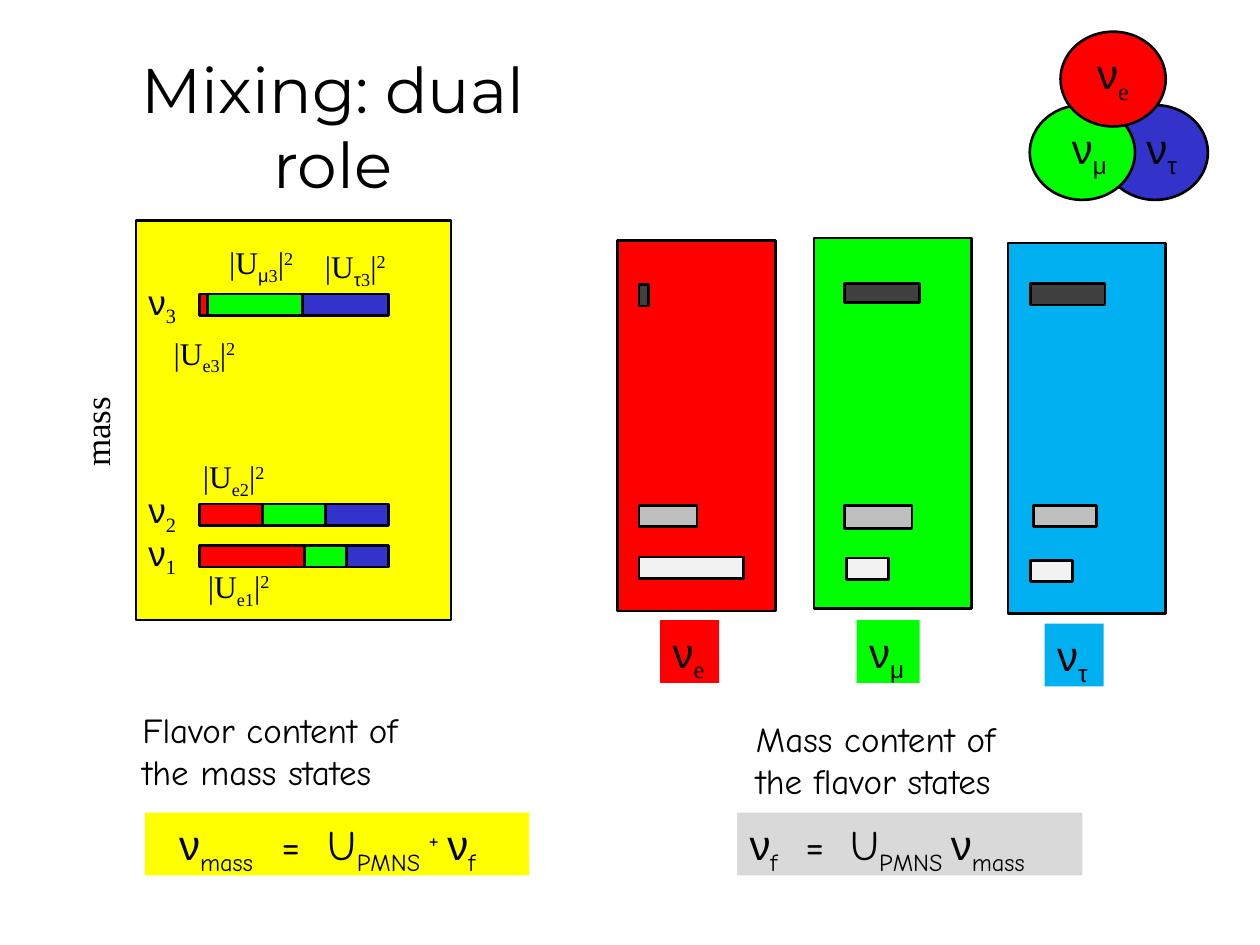
"""Build the neutrino mixing slide: flavor content of mass states and mass content of flavor states."""
import pptx
import pptx.dml.color
import pptx.enum.shapes
import pptx.enum.text
import pptx.oxml
import pptx.oxml.ns
import pptx.util

Cm = pptx.util.Cm
SHAPES = pptx.enum.shapes.MSO_SHAPE
COLORS = {
    "black": "000000", "red": "FF0000", "green": "00FF00", "blue": "3333CC",
    "sky": "00B0F0", "yellow": "FFFF00", "silver": "D9D9D9",
    "dark": "404040", "mid": "BFBFBF", "light": "F2F2F2",
}
SANS, SERIF, COMIC, HEAD = "Arial", "Times New Roman", "Comic Neue", "Montserrat"
SUB, SUP = -25, 30
FLAVOR_COLORS = ("red", "green", "blue")
MASS_COLORS = ("dark", "mid", "light")
FLAVOR_FONTS = {"e": SERIF, "μ": SANS, "τ": SANS}

MASS_PANEL = (2.74, 4.45, 6.35, 8.05)
PANEL_SIZE = (3.18, 7.47)
CIRCLE_SIZE = (2.12, 1.91)
BAR_HEIGHT = 0.43

FLAVOR_PANELS = [
    {"flavor": "τ", "fill": "sky", "at": (20.32, 4.9), "tag": (21.06, 12.57, 1.19),
     "bars": [(20.78, 5.72, 1.5, 0.43), (20.83, 10.19, 1.27, 0.43), (20.78, 11.3, 0.84, 0.43)]},
    {"flavor": "μ", "fill": "green", "at": (16.41, 4.8), "tag": (17.27, 12.5, 1.27),
     "bars": [(17.02, 5.72, 1.52, 0.38), (17.02, 10.19, 1.37, 0.46), (17.07, 11.25, 0.84, 0.43)]},
    {"flavor": "e", "fill": "red", "at": (12.45, 4.85), "tag": (13.31, 12.5, 1.19),
     "bars": [(12.88, 5.74, 0.2, 0.43), (12.88, 10.19, 1.17, 0.43), (12.88, 11.23, 2.11, 0.43)]},
]
CIRCLES = [
    ("τ", "blue", (22.23, 2.12), (22.86, 2.34, 1.19)),
    ("μ", "green", (20.76, 2.12), (21.36, 2.34, 1.27)),
    ("e", "red", (21.38, 0.64), (21.87, 0.84, 1.19)),
]
MASS_STATES = [
    ("3", 5.52, 5.93, (4.02, 4.19, 6.1, 7.83)),
    ("2", 9.73, 10.16, (4.02, 5.29, 6.56, 7.83)),
    ("1", 10.58, 11.0, (4.02, 6.14, 6.99, 7.83)),
]
ELEMENTS = [
    ("e", "3", 3.25, 6.6), ("μ", "3", 4.37, 4.78), ("τ", "3", 6.3, 4.85),
    ("e", "1", 3.94, 11.3), ("e", "2", 3.84, 9.09),
]
CAPTIONS = [
    ((14.99, 14.33, 6.4, 1.96), ["Mass content of", "the flavor states"]),
    ((2.62, 14.15, 6.48, 1.96), ["Flavor content of the mass states"]),
]
FORMULAS = [
    {"box": (14.86, 16.38, 6.96, 1.27), "fill": "silver", "inset": 0.25, "tabs": (1.12, 2.03),
     "runs": [("ν", SANS, 0), ("f", COMIC, SUB), ("\t=\tU", COMIC, 0), ("PMNS ", COMIC, SUB),
              ("ν", SANS, 0), ("mass", COMIC, SUB)]},
    {"box": (2.92, 16.38, 7.75, 1.27), "fill": "yellow", "inset": 0.69, "tabs": (2.06, 3.0),
     "runs": [("ν", SANS, 0), ("mass", COMIC, SUB), ("\t=\tU", COMIC, 0), ("PMNS ", COMIC, SUB),
              ("+ ", COMIC, SUP), ("ν", SANS, 0), ("f", COMIC, SUB)]},
]


def rgb(name):
    """Return the named colour."""
    return pptx.dml.color.RGBColor.from_string(COLORS[name])


def add_child(parent, xml):
    """Append a DrawingML element to parent and return it."""
    el = pptx.oxml.parse_xml(xml.replace("/>", f" {pptx.oxml.ns.nsdecls('a')}/>", 1))
    parent.append(el)
    return el


def add_box(slide, box, fill, kind=SHAPES.RECTANGLE):
    """Add a filled shape with a black outline."""
    sp = slide.shapes.add_shape(kind, *map(Cm, box))
    sp.shadow.inherit = False
    sp.fill.solid()
    sp.fill.fore_color.rgb = rgb(fill)
    sp.line.color.rgb = rgb("black")
    sp.line.width = pptx.util.Pt(1.5)


def add_text(slide, box, paragraphs, size=24, fill=None, wrap=False, align=None,
             rotation=0, inset=0.25, tabs=()):
    """Add a text box whose paragraphs are lists of (text, font, baseline) runs."""
    sp = slide.shapes.add_textbox(*map(Cm, box))
    sp.rotation = rotation
    if fill:
        sp.fill.solid()
        sp.fill.fore_color.rgb = rgb(fill)
    tf = sp.text_frame
    tf.word_wrap = wrap
    tf.margin_left = Cm(inset)
    for i, runs in enumerate(paragraphs):
        p = tf.add_paragraph() if i else tf.paragraphs[0]
        p.alignment = align
        if tabs:
            stops = add_child(p._p.get_or_add_pPr(), "<a:tabLst/>")
            for pos in tabs:
                add_child(stops, f'<a:tab pos="{Cm(pos)}" algn="l"/>')
        for content, font, base in runs:
            r = p.add_run()
            r.text = content
            r.font.size = pptx.util.Pt(size)
            r.font.name = font
            r.font.color.rgb = rgb("black")
            if base:
                r.font._element.set("baseline", str(base * 1000))


def neutrino(label, font=SERIF):
    """Return the runs of a neutrino symbol with its index."""
    return [("ν", SANS, 0), (label, font, SUB)]


def main():
    """Draw the slide and save it."""
    prs = pptx.Presentation()
    prs.slide_width, prs.slide_height = Cm(25.4), Cm(19.05)
    slide = prs.slides.add_slide(prs.slide_layouts[6])

    for panel in FLAVOR_PANELS:
        add_box(slide, panel["at"] + PANEL_SIZE, panel["fill"])
        for bar, color in zip(panel["bars"], MASS_COLORS):
            add_box(slide, bar, color)
        flavor = panel["flavor"]
        add_text(slide, panel["tag"] + (1.27,), [neutrino(flavor, FLAVOR_FONTS[flavor])],
                 fill=panel["fill"])

    add_box(slide, MASS_PANEL, "yellow")
    for index, label_top, bar_top, edges in MASS_STATES:
        add_text(slide, (2.74, label_top, 1.12, 1.09), [neutrino(index)], size=20)
        for left, right, color in zip(edges, edges[1:], FLAVOR_COLORS):
            add_box(slide, (left, bar_top, right - left, BAR_HEIGHT), color)
    for flavor, index, left, top in ELEMENTS:
        runs = [("|U", SERIF, 0), (flavor, FLAVOR_FONTS[flavor], SUB), (index, SERIF, SUB),
                ("|", SERIF, 0), ("2", SERIF, SUP)]
        add_text(slide, (left, top, 1.83, 1.02), [runs], size=18)
    add_text(slide, (0.97, 8.15, 1.93, 1.09), [[("mass", SERIF, 0)]], size=20, rotation=270)

    for flavor, color, at, label in CIRCLES:
        add_box(slide, at + CIRCLE_SIZE, color, SHAPES.OVAL)
    for flavor, color, at, label in CIRCLES:
        add_text(slide, label + (1.27,), [neutrino(flavor, FLAVOR_FONTS[flavor])])

    for box, lines in CAPTIONS:
        add_text(slide, box, [[(line, COMIC, 0)] for line in lines], size=20, wrap=True)
    for formula in FORMULAS:
        add_text(slide, formula["box"], [formula["runs"]], fill=formula["fill"], wrap=True,
                 inset=formula["inset"], tabs=formula["tabs"])
    add_text(slide, (1.37, 0.89, 10.69, 2.46), [[("Mixing: dual role", HEAD, 0)]], size=36,
             align=pptx.enum.text.PP_ALIGN.CENTER)
    prs.save("out.pptx")


if __name__ == "__main__":
    main()
